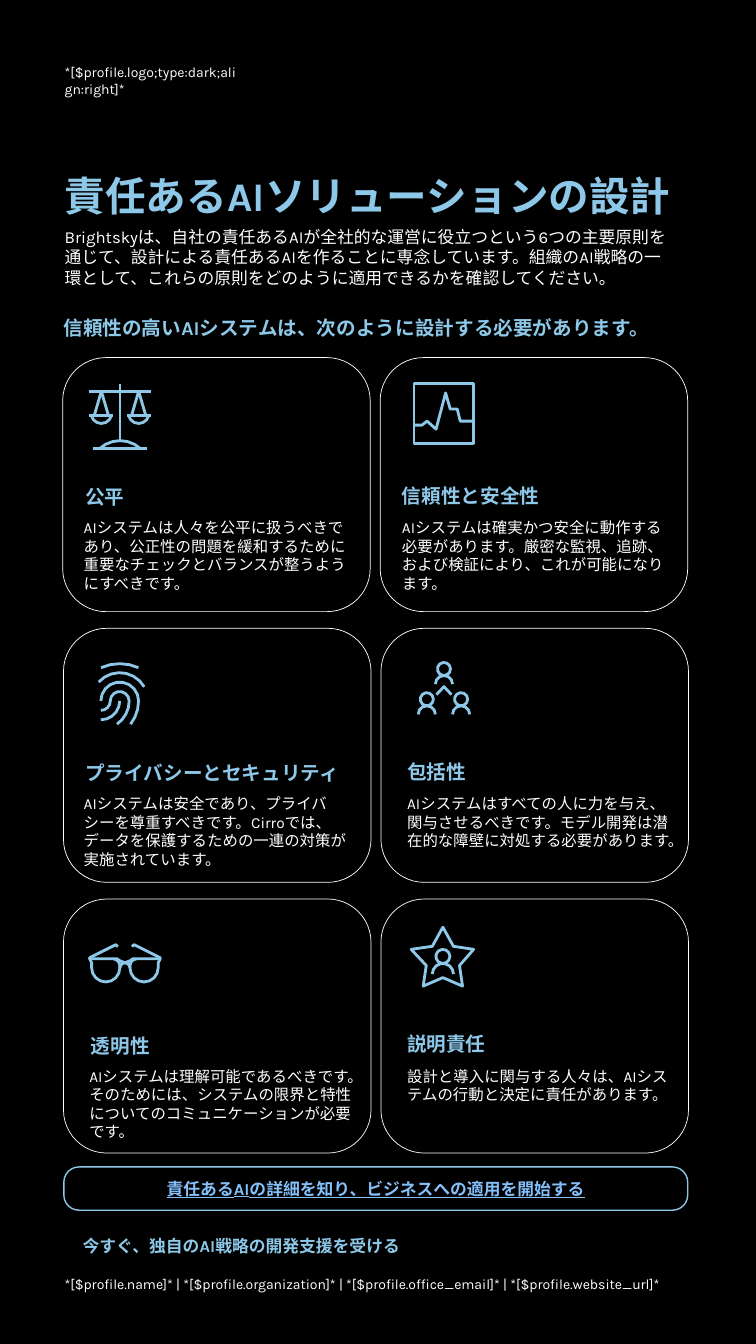
from math import acos, ceil, cos, degrees, radians, sin

from pptx import Presentation
from pptx import util as u
from pptx.dml.color import RGBColor
from pptx.enum import shapes, text

SKY, WHITE, LINK, BLACK = "8DC8E8", "FFFFFF", "85C0FB", "000000"
FINE = 100  # steps per icon unit; one unit is 0.01 inch
LEFT, MID = text.PP_ALIGN.LEFT, text.PP_ALIGN.CENTER
TOP, HALF, BASE = (text.MSO_ANCHOR.TOP, text.MSO_ANCHOR.MIDDLE,
                   text.MSO_ANCHOR.BOTTOM)


def paint(code):
    return RGBColor.from_string(code)


def write(frame, words, size=11, color=WHITE, bold=False, under=False,
          align=LEFT, anchor=TOP, space=1):
    frame.word_wrap = True
    frame.auto_size = text.MSO_AUTO_SIZE.NONE
    frame.vertical_anchor = anchor
    frame.margin_left = frame.margin_right = 0
    frame.margin_top = frame.margin_bottom = 0
    para = frame.paragraphs[0]
    para.alignment, para.line_spacing = align, space
    para.space_before = u.Pt(0)
    run = para.add_run()
    run.text = words
    font = run.font
    font.name, font.size = "Karla", u.Pt(size)
    font.bold, font.underline = bold, under
    font.color.rgb = paint(color)


class Page:
    def __init__(self, wide, high):
        self.deck = Presentation()
        self.deck.slide_width, self.deck.slide_height = u.Cm(wide), u.Cm(high)
        self.slide = self.deck.slides.add_slide(self.deck.slide_layouts[5])
        self.items = self.slide.shapes
        fill = self.slide.background.fill
        fill.solid()
        fill.fore_color.rgb = paint(BLACK)

    def title(self, words, x, y, w, h, **form):
        head = self.items.title
        head.left, head.top, head.width, head.height = map(u.Cm, (x, y, w, h))
        write(head.text_frame, words, **form)

    def label(self, words, x, y, w, h, **form):
        box = self.items.add_textbox(*map(u.Cm, (x, y, w, h)))
        write(box.text_frame, words, **form)

    def outline(self, shape, color, width):
        shape.shadow.inherit = False
        shape.fill.background()
        shape.line.color.rgb = paint(color)
        shape.line.width = u.Pt(width)

    def frame(self, x, y, w, h, color, width, turn=0.17):
        kind = shapes.MSO_SHAPE.ROUNDED_RECTANGLE
        box = self.items.add_shape(kind, *map(u.Cm, (x, y, w, h)))
        box.adjustments[0] = turn
        self.outline(box, color, width)
        return box

    def icon(self, x, y, strokes):
        pen = None
        for stroke in strokes:
            dots = [(round(px * FINE), round(py * FINE)) for px, py in stroke]
            if pen is None:
                pen = self.items.build_freeform(
                    *dots[0], scale=u.Cm(2.54) / 100 / FINE)
            else:
                pen.move_to(*dots[0])
            loop = dots[0] == dots[-1]
            pen.add_line_segments(dots[1:-1] if loop else dots[1:], close=loop)
        self.outline(pen.convert_to_shape(u.Cm(x), u.Cm(y)), SKY, 2)


# Icon strokes; angles run clockwise from the right
def arc(x, y, r, start, end, slack=0.3):
    widest = 2 * degrees(acos(1 - slack / r))
    steps = ceil(abs(end - start) / widest)
    turns = [radians(start + (end - start) * i / steps)
             for i in range(steps + 1)]
    return [(x + r * cos(t), y + r * sin(t)) for t in turns]


def ring(dots):
    return dots + dots[:1]


def person(x, y, head, body):
    return [arc(x, y, head, 0, 360), arc(x, y + head + body, body, 180, 360)]


def scales():
    out = [[(0, 7), (61, 7)], [(30.5, 0), (30.5, 55)], [(4, 64), (57, 64)],
           arc(30.5, 86.3, 30.3, 227.4, 312.6)]
    for x in (12, 49):
        out += [[(x - 12, 31), (x + 12, 31)], arc(x, 28.75, 10.25, 12, 168),
                ring([(x, 7), (x - 7, 31), (x + 7, 31)])]
    return out


def pulse():
    return [ring([(0, 0), (59.5, 0), (59.5, 59.5), (0, 59.5)]),
            [(59.5, 37), (46, 37), (43, 25), (36, 25), (31.5, 9), (22, 45),
             (13, 37), (8, 41), (0, 41)]]


def finger():
    x, y, gap = 20.75, 37, 9.35
    edge = x - 2 * gap
    return [arc(x, 44.8, 44.8, 245.6, 294.4),
            arc(x, y, 3 * gap, 222, 330),
            arc(x, y, 2 * gap, 180, 360) + arc(edge, y, 4 * gap, 0, 38)[1:],
            arc(edge, y, gap, 90, 0) + arc(x, y, gap, 180, 360)[1:]
            + arc(edge, y, 3 * gap, 0, 55)[1:],
            arc(edge, y, 2 * gap, 0, 90)]


def team():
    heads = ((25.5, 6.5), (8.5, 36.5), (42.5, 36.5))
    out = [[(33, 32), (25.5, 24), (18, 32)]]
    for x, y in heads:
        out += person(x, y, 6.5, 8.5)
    return out


def glasses():
    half = [[(28, 2), (26, 0), (0, 13), (0, 14), (2, 18)]
            + arc(16, 23, 14, 180, 0) + arc(35, 23, 5, 180, 270)[1:],
            [(1, 14)] + arc(23, 21, 7, 270, 360) + [(30, 23)],
            [(24, 14), (27, 14), (30, 16), (35, 18)]]
    return half + [[(70 - x, y) for x, y in stroke] for stroke in half]


def star():
    rim = [(21, 19), (31.5, 0), (42, 19), (62, 22), (48, 38), (51, 58.5),
           (31.5, 50), (12, 58.5), (15, 38), (0, 22)]
    return [ring(rim)] + person(31.5, 29, 7, 10.5)


# Icon, its corner, heading, text, text left and width
CARDS = [
    (scales, 2.25, 9.68, "公平",
     "AIシステムは人々を公平に扱うべきであり、公正性の問題を緩和するために重要なチェックとバランスが整うようにすべきです。",
     2.11, 6.65),
    (pulse, 10.43, 9.67, "信頼性と安全性",
     "AIシステムは確実かつ安全に動作する必要があります。厳密な監視、追跡、および検証により、これが可能になります。",
     10.13, 6.65),
    (finger, 2.49, 16.72, "プライバシーとセキュリティ",
     "AIシステムは安全であり、プライバシーを尊重すべきです。Cirroでは、データを保護するための一連の対策が実施されています。",
     2.11, 6.65),
    (team, 10.54, 16.69, "包括性",
     "AIシステムはすべての人に力を与え、関与させるべきです。モデル開発は潜在的な障壁に対処する必要があります。",
     10.26, 6.88),
    (glasses, 2.26, 23.8, "透明性",
     "AIシステムは理解可能であるべきです。そのためには、システムの限界と特性についてのコミュニケーションが必要です。",
     2.25, 6.91),
    (star, 10.36, 23.36, "説明責任",
     "設計と導入に関与する人々は、AIシステムの行動と決定に責任があります。",
     10.26, 6.65),
]
# Card left edge, heading top and text top of each row
ROWS = [(1.58, 12.22, 13.06), (1.6, 19.18, 20.01), (1.6, 26.04, 26.88)]


def main():
    page = Page(19.05, 33.86)

    # Top: logo field, title, introduction
    page.label("*[$profile.logo;type:dark;align:right]*", 1.63, 0.99, 4.32,
               2.08, size=10, anchor=HALF)
    page.title("責任あるAIソリューションの設計", 1.63, 4.01, 15.72, 1.55,
               size=29, color=SKY, bold=True, anchor=BASE, space=0.9)
    page.label("Brightskyは、自社の責任あるAIが全社的な運営に役立つという6つの主要原則を通じて、"
               "設計による責任あるAIを作ることに専念しています。組織のAI戦略の一環として、"
               "これらの原則をどのように適用できるかを確認してください。",
               1.63, 5.72, 15.32, 1.8, size=12)
    page.label("信頼性の高いAIシステムは、次のように設計する必要があります。",
               1.6, 7.96, 15.32, 0.89, size=14, color=SKY, bold=True)

    # Six principle cards
    for i, (draw, ix, iy, head, body, x, w) in enumerate(CARDS):
        row, col = divmod(i, 2)
        edge, high, low = ROWS[row]
        page.frame(edge + 8 * col, 9.01 + 6.82 * row, 7.75, 6.4, WHITE, 0.5)
        page.icon(ix, iy, draw())
        page.label(head, x + 0.04 * (1 - col), high - 0.04 * col, 6.63, 0.89,
                   size=14, color=SKY, bold=True)
        page.label(body, x, low, w, 1.63)

    # Bottom: button, invitation, contact fields
    bar = page.frame(1.61, 29.4, 15.72, 1.09, SKY, 1, turn=0.35)
    write(bar.text_frame, "責任あるAIの詳細を知り、ビジネスへの適用を開始する", size=12,
          color=LINK, bold=True, under=True, align=MID, anchor=HALF)
    page.label("今すぐ、独自のAI戦略の開発支援を受ける", 2.08, 31.13, 14.81, 0.89,
               size=12, color=SKY, bold=True)
    page.label("*[$profile.name]* | *[$profile.organization]* | "
               "*[$profile.office_email]* | *[$profile.website_url]*",
               1.63, 32.13, 15.44, 0.58, size=10)

    page.deck.save("out.pptx")


if __name__ == "__main__":
    main()
